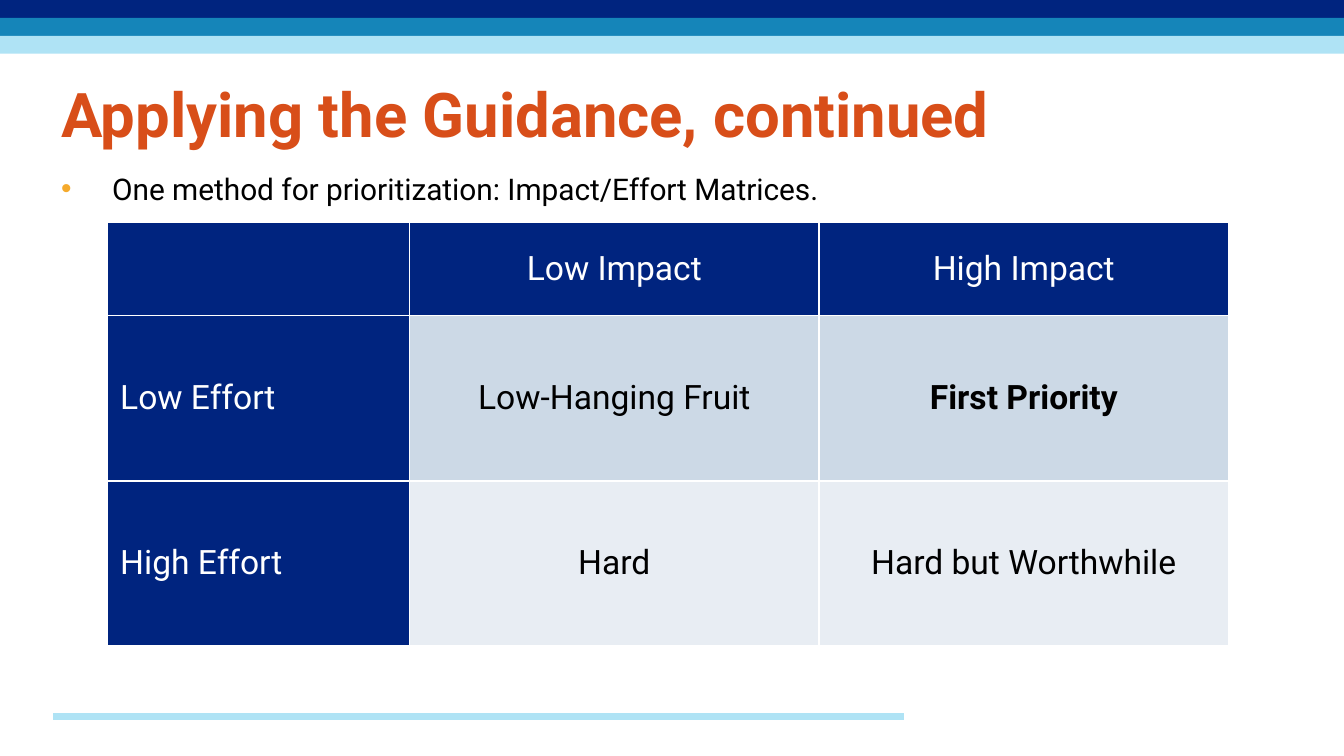
from lxml.etree import SubElement
from pptx import Presentation
from pptx.dml.color import RGBColor
from pptx.enum.shapes import MSO_CONNECTOR, MSO_SHAPE
from pptx.enum.text import MSO_ANCHOR, PP_ALIGN
from pptx.oxml.ns import qn
from pptx.util import Pt

NAVY, BLUE, SKY = "00247F", "1585B9", "AFE3F5"
ORANGE, AMBER = "D84E19", "F5AA2C"
WHITE, BLACK = "FFFFFF", "000000"
ROW_FILLS = [NAVY, "CCD9E6", "E8EDF3"]
MATRIX = [
    ["", "Low Impact", "High Impact"],
    ["Low Effort", "Low-Hanging Fruit", "First Priority"],
    ["High Effort", "Hard", "Hard but Worthwhile"],
]


def rgb(value):
    return RGBColor.from_string(value)


def style(p, size, color, bold=False):
    for r in p.runs:
        r.font.name = "Roboto"
        r.font.size = Pt(size)
        r.font.bold = bold
        r.font.color.rgb = rgb(color)


def add_bands(s, x, y, w, h):
    band_h = h / 3
    for i, color in enumerate([NAVY, BLUE, SKY]):
        sp = s.shapes.add_shape(MSO_SHAPE.RECTANGLE, Pt(x), Pt(y + i * band_h), Pt(w), Pt(band_h))
        sp.shadow.inherit = False
        sp.fill.solid()
        sp.fill.fore_color.rgb = rgb(color)
        sp.line.fill.background()


def add_footer_rule(s, x, y, w):
    rule = s.shapes.add_connector(MSO_CONNECTOR.STRAIGHT, Pt(x), Pt(y), Pt(x + w), Pt(y))
    rule.line.color.rgb = rgb(SKY)
    rule.line.width = Pt(4)
    SubElement(rule._element.spPr, qn("a:effectLst"))


def add_text(s, x, y, w, h, text, size, color, bold=False):
    tf = s.shapes.add_textbox(Pt(x), Pt(y), Pt(w), Pt(h)).text_frame
    tf.word_wrap = True
    tf.text = text
    p = tf.paragraphs[0]
    style(p, size, color, bold)
    return p


def add_bullet(s, x, y, w, h, text):
    p = add_text(s, x, y, w, h, text, 16, BLACK)
    pPr = p._p.get_or_add_pPr()
    pPr.set("marL", str(Pt(27.4)))
    pPr.set("indent", str(-Pt(27.4)))
    SubElement(SubElement(pPr, qn("a:buClr")), qn("a:srgbClr"), val=AMBER)
    SubElement(pPr, qn("a:buFont"), typeface="Arial")
    SubElement(pPr, qn("a:buChar"), char="•")
    p.line_spacing = 1.07
    p.space_after = Pt(8)


def set_borders(cell):
    tcPr = cell._tc.get_or_add_tcPr()
    for i, side in enumerate(["lnL", "lnR", "lnT", "lnB"]):
        ln = tcPr.makeelement(qn("a:" + side), {"w": str(Pt(1))})
        SubElement(SubElement(ln, qn("a:solidFill")), qn("a:srgbClr"), val=WHITE)
        tcPr.insert(i, ln)


def add_matrix(s, x, y, w, h):
    table = s.shapes.add_table(3, 3, Pt(x), Pt(y), Pt(w), Pt(h)).table
    label_w, header_h = w * 0.27, h * 0.22
    for i in range(3):
        table.columns[i].width = Pt(label_w if i == 0 else (w - label_w) / 2)
        table.rows[i].height = Pt(header_h if i == 0 else (h - header_h) / 2)
    for i, row in enumerate(MATRIX):
        for j, text in enumerate(row):
            cell = table.cell(i, j)
            is_label = i == 0 or j == 0
            cell.fill.solid()
            cell.fill.fore_color.rgb = rgb(NAVY if is_label else ROW_FILLS[i])
            set_borders(cell)
            cell.vertical_anchor = MSO_ANCHOR.MIDDLE
            cell.text_frame.text = text
            p = cell.text_frame.paragraphs[0]
            p.alignment = PP_ALIGN.LEFT if j == 0 else PP_ALIGN.CENTER
            style(p, 18, WHITE if is_label else BLACK, text == "First Priority")


def main():
    prs = Presentation()
    prs.slide_width, prs.slide_height = Pt(720), Pt(405)
    s = prs.slides.add_slide(prs.slide_layouts[6])
    add_bands(s, 0, 0, 720, 28.8)
    add_footer_rule(s, 28.6, 383.8, 455.8)
    add_text(s, 25.6, 37, 677, 34, "Applying the Guidance, continued", 33, ORANGE, True)
    add_bullet(s, 25.6, 86.4, 683, 284,
               "One method for prioritization: Impact/Effort Matrices.")
    add_matrix(s, 57.2, 119.2, 601, 227)
    prs.save("out.pptx")


if __name__ == "__main__":
    main()
